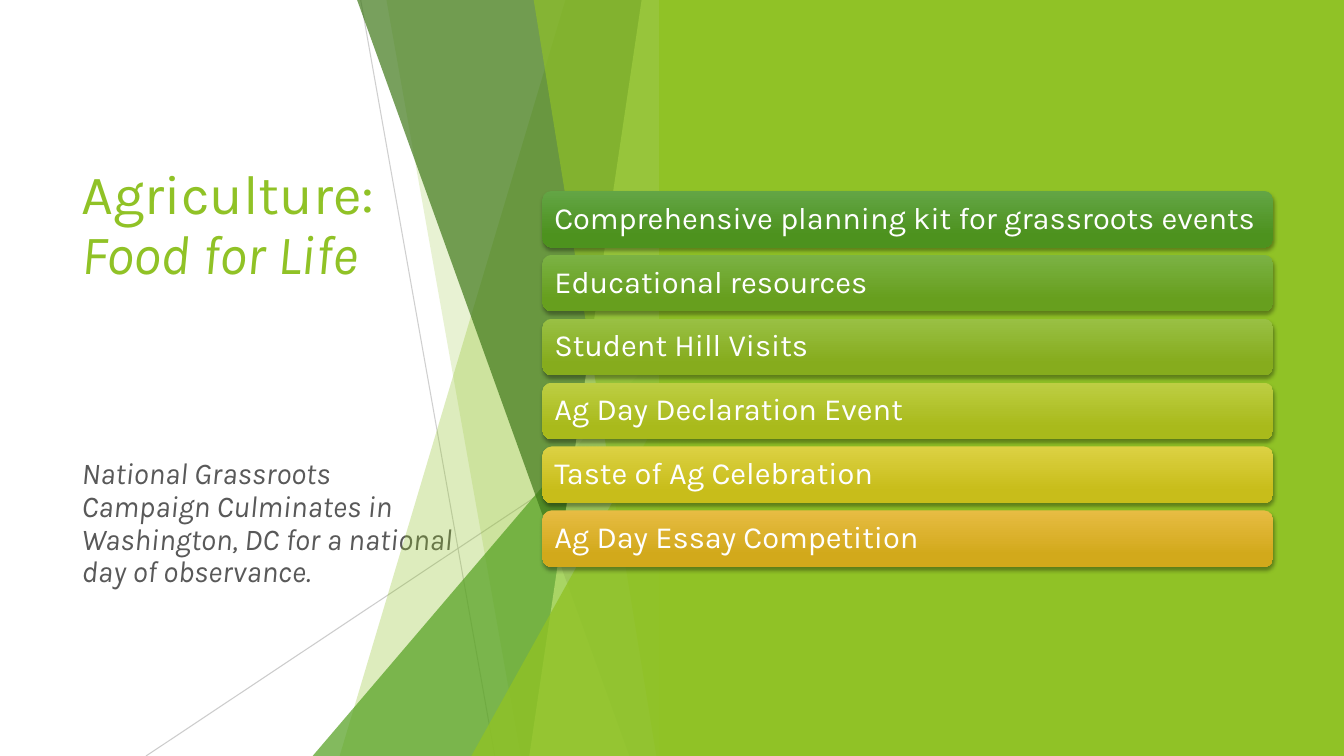
from lxml.etree import SubElement
from pptx import Presentation
from pptx.dml.color import RGBColor
from pptx.enum.shapes import MSO_CONNECTOR, MSO_SHAPE
from pptx.enum.text import MSO_ANCHOR, MSO_AUTO_SIZE, PP_ALIGN
from pptx.oxml.ns import qn
from pptx.util import Cm, Pt

WHITE = RGBColor(0xFF, 0xFF, 0xFF)
GREY = RGBColor(0x59, 0x59, 0x59)
SILVER = RGBColor(0xBF, 0xBF, 0xBF)
LIME = RGBColor(0x90, 0xC2, 0x26)
LEAF = RGBColor(0x54, 0xA0, 0x21)
FOREST = RGBColor(0x3F, 0x78, 0x19)
PALE = RGBColor(0xC0, 0xE4, 0x74)

WIDTH, HEIGHT = 33.87, 19.05
EDGE = 16.92
PANEL = 16.61

BARS = [
    ("Comprehensive planning kit for grassroots events",
     RGBColor(0x63, 0xA5, 0x45), RGBColor(0x4D, 0x92, 0x1E)),
    ("Educational resources",
     RGBColor(0x7B, 0xB2, 0x44), RGBColor(0x67, 0x9F, 0x1E)),
    ("Student Hill Visits",
     RGBColor(0x99, 0xC0, 0x44), RGBColor(0x86, 0xAC, 0x1D)),
    ("Ag Day Declaration Event",
     RGBColor(0xBD, 0xCE, 0x43), RGBColor(0xA9, 0xBA, 0x1B)),
    ("Taste of Ag Celebration",
     RGBColor(0xDC, 0xD1, 0x43), RGBColor(0xC8, 0xBD, 0x1A)),
    ("Ag Day Essay Competition",
     RGBColor(0xE7, 0xBC, 0x43), RGBColor(0xD2, 0xA9, 0x1B)),
]


class Deck:
    """Holds the style and the current slide, and draws each kind of element."""

    def __init__(self, font):
        self.font = font
        self.show = Presentation()
        self.show.slide_width = Cm(WIDTH)
        self.show.slide_height = Cm(HEIGHT)
        self.slide = self.show.slides.add_slide(self.show.slide_layouts[5])
        self.shapes = self.slide.shapes

    def label(self, para, text, size, color, italic=False, before=0):
        para.text = text
        para.alignment = PP_ALIGN.LEFT
        para.line_spacing = 0.9
        para.space_before = Pt(before)
        font = para.font
        font.name, font.size, font.italic = self.font, Pt(size), italic
        font.color.rgb = color

    def fade(self, props, alpha):
        color = props.find(qn("a:solidFill"))[0]
        SubElement(color, qn("a:alpha")).set("val", str(alpha * 1000))

    def paint(self, shape, color, alpha=100):
        shape.shadow.inherit = False
        shape.line.fill.background()
        shape.fill.solid()
        shape.fill.fore_color.rgb = color
        if alpha < 100:
            self.fade(shape._element.spPr, alpha)

    def title(self, box, lines):
        title = self.shapes.title
        title.left, title.top, title.width, title.height = map(Cm, box)
        frame = title.text_frame
        frame.word_wrap = True
        frame.auto_size = MSO_AUTO_SIZE.NONE
        frame.vertical_anchor = MSO_ANCHOR.MIDDLE
        for i, line in enumerate(lines):
            para = frame.add_paragraph() if i else frame.paragraphs[0]
            self.label(para, *line)

    def line(self, start, end, alpha):
        line = self.shapes.add_connector(
            MSO_CONNECTOR.STRAIGHT, *map(Cm, start + end))
        line.line.width = Pt(0.75)
        line.line.color.rgb = SILVER
        props = line._element.spPr
        self.fade(props.find(qn("a:ln")), alpha)
        SubElement(props, qn("a:effectLst"))

    def facet(self, top, base, color, alpha):
        form = self.shapes.build_freeform(Cm(top), 0)
        points = [(EDGE, 0), (EDGE, HEIGHT), (base, HEIGHT)]
        form.add_line_segments([(Cm(x), Cm(y)) for x, y in points], close=True)
        self.paint(form.convert_to_shape(), color, alpha)

    def wedge(self, left, top, color, alpha):
        wedge = self.shapes.add_shape(
            MSO_SHAPE.ISOSCELES_TRIANGLE, Cm(left), Cm(top),
            Cm(EDGE - left), Cm(HEIGHT - top))
        wedge.adjustments[0] = 1.0
        self.paint(wedge, color, alpha)

    def panel(self, left):
        panel = self.shapes.add_shape(
            MSO_SHAPE.RECTANGLE, Cm(left), 0, Cm(WIDTH - left), Cm(HEIGHT))
        self.paint(panel, LIME)

    def bar(self, top, text, light, dark):
        bar = self.shapes.add_shape(
            MSO_SHAPE.ROUNDED_RECTANGLE, Cm(13.67), Cm(top), Cm(18.42), Cm(1.43))
        bar.line.fill.background()
        bar.fill.gradient()
        bar.fill.gradient_angle = 270
        for stop, place, color in zip(
                bar.fill.gradient_stops, (0, 0.78), (light, dark)):
            stop.position = place
            stop.color.rgb = color
        self.shade(bar)
        frame = bar.text_frame
        frame.word_wrap = True
        frame.vertical_anchor = MSO_ANCHOR.MIDDLE
        frame.margin_left = frame.margin_right = Cm(0.23)
        frame.margin_top = frame.margin_bottom = Cm(0.1)
        self.label(frame.paragraphs[0], text, 22, WHITE)

    def shade(self, shape):
        shape.shadow.inherit = False
        effects = shape._element.spPr.find(qn("a:effectLst"))
        shadow = SubElement(
            effects, qn("a:outerShdw"), blurRad=str(Pt(3)), dist=str(Pt(2)),
            dir="5400000", rotWithShape="0")
        color = SubElement(shadow, qn("a:srgbClr"), val="000000")
        SubElement(color, qn("a:alpha"), val="35000")


def main():
    deck = Deck("Karla")
    deck.title((1.8, 3.84, 9.86, 11.38), [
        ("Agriculture:", 39.6, LIME),
        ("Food for Life", 39.6, LIME, True),
        ("National Grassroots Campaign Culminates in Washington, DC "
         "for a national day of observance.", 21.6, GREY, True, 123),
    ])
    deck.line((9.09, 0), (12.47, HEIGHT), 75)
    deck.line((EDGE, 10.24), (3.68, HEIGHT), 80)
    deck.facet(14.25, 8.56, LIME, 30)
    deck.facet(9.74, 13.12, LIME, 20)
    deck.wedge(7.88, 8.46, LEAF, 72)
    deck.facet(9, 15.86, FOREST, 70)
    deck.facet(16.17, 13.34, PALE, 70)
    deck.facet(13.45, 16.54, LIME, 65)
    deck.wedge(11.88, 9.98, LIME, 80)
    deck.panel(PANEL)
    for i, item in enumerate(BARS):
        deck.bar(4.81 + 1.61 * i, *item)
    deck.show.save("out.pptx")


if __name__ == "__main__":
    main()
